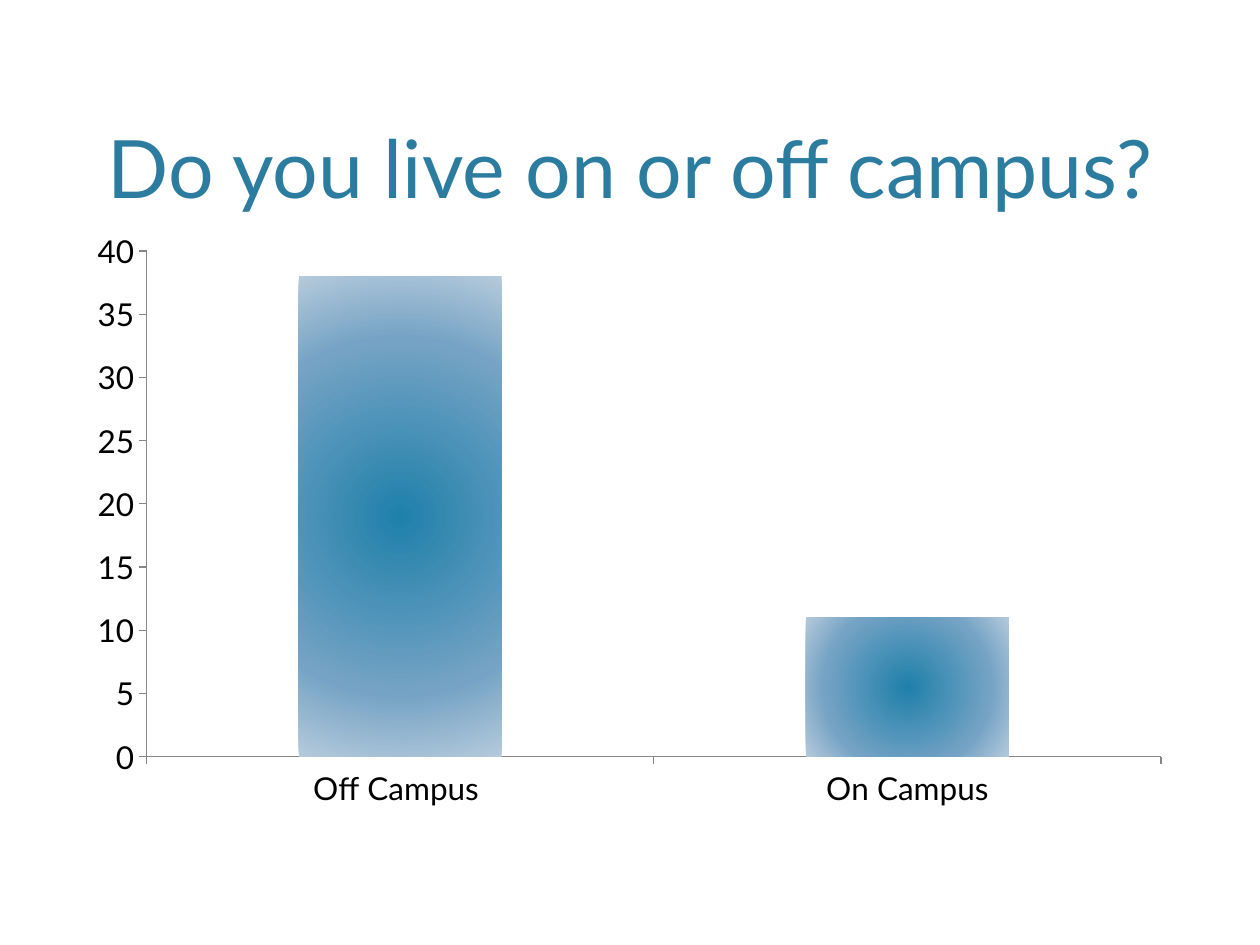
from dataclasses import dataclass

from lxml import etree
from pptx import Presentation
from pptx import util as u
from pptx.chart.data import CategoryChartData
from pptx.dml.color import RGBColor
from pptx.enum import chart as charts, text
from pptx.oxml import parse_xml
from pptx.oxml.ns import nsdecls, qn

WIDTH, HEIGHT = u.Inches(10), u.Inches(7.5)
FONT = "Lato"
TITLE_BLUE = RGBColor(0x2C, 0x7C, 0x9F)
BLACK = RGBColor(0, 0, 0)
AXIS_GRAY = RGBColor(0x86, 0x86, 0x86)
# Bar gradient from centre to corner: position in percent, colour
BAR_STOPS = (
    (0, RGBColor(0x1F, 0x80, 0xAA)),
    (68, RGBColor(0x75, 0xA3, 0xC5)),
    (100, RGBColor(0xB5, 0xCA, 0xDB)),
)


@dataclass(frozen=True)
class Area:
    """A rectangle in shares of its container."""
    left: float
    top: float
    width: float
    height: float

    def on_slide(self) -> tuple[int, int, int, int]:
        return (int(self.left * WIDTH), int(self.top * HEIGHT),
                int(self.width * WIDTH), int(self.height * HEIGHT))


TITLE_AREA = Area(0.06, 0.29 / 7.5, 0.88, 1.46 / 7.5)
CHART_AREA = Area(0.06, 1.75 / 7.5, 0.88, 4.75 / 7.5)
PLOT_AREA = Area(0.064, 0.051, 0.915, 0.845)


def style_font(font, *, size: float, color: RGBColor) -> None:
    font.name = FONT
    font.size = u.Pt(size)
    font.bold = False
    font.color.rgb = color


def write_title(box, wording: str, *, size: float, color: RGBColor) -> None:
    box.left, box.top, box.width, box.height = TITLE_AREA.on_slide()
    frame = box.text_frame
    frame.text = wording
    frame.word_wrap = True
    frame.auto_size = text.MSO_AUTO_SIZE.NONE
    frame.vertical_anchor = text.MSO_ANCHOR.BOTTOM
    para = frame.paragraphs[0]
    para.alignment = text.PP_ALIGN.CENTER
    style_font(para.runs[0].font, size=size, color=color)


def style_axis(axis) -> None:
    axis.has_major_gridlines = False
    axis.major_tick_mark = charts.XL_TICK_MARK.OUTSIDE
    axis.minor_tick_mark = charts.XL_TICK_MARK.NONE
    axis.format.line.color.rgb = AXIS_GRAY
    axis.format.line.width = u.Pt(0.75)
    style_font(axis.tick_labels.font, size=18, color=BLACK)


def fill_radially(series) -> None:
    """Fill the bars with a circular gradient, which needs XML."""
    series.format.fill.solid()
    properties = series.format.fill._xPr
    stops = "".join(
        f'<a:gs pos="{position * 1000}"><a:srgbClr val="{color}"/></a:gs>'
        for position, color in BAR_STOPS)
    gradient = parse_xml(
        f'<a:gradFill {nsdecls("a")} rotWithShape="1"><a:gsLst>{stops}</a:gsLst>'
        '<a:path path="circle">'
        '<a:fillToRect l="50000" t="50000" r="50000" b="50000"/>'
        '</a:path></a:gradFill>')
    properties.replace(properties.find(qn("a:solidFill")), gradient)


def place_plot(chart, area: Area) -> None:
    """Fix the inner plot area, which needs XML."""
    plot_area = chart._chartSpace.chart.plotArea
    for old in plot_area.findall(qn("c:layout")):
        plot_area.remove(old)
    layout = etree.Element(qn("c:layout"))
    manual = etree.SubElement(layout, qn("c:manualLayout"))
    for tag, value in (("layoutTarget", "inner"), ("xMode", "edge"),
                       ("yMode", "edge"), ("x", area.left), ("y", area.top),
                       ("w", area.width), ("h", area.height)):
        etree.SubElement(manual, qn(f"c:{tag}")).set("val", str(value))
    plot_area.insert(0, layout)


def add_campus_chart(page) -> None:
    data = CategoryChartData()
    data.categories = ["Off Campus ", "On Campus"]
    data.add_series("Series 1", (38, 11))
    chart = page.shapes.add_chart(
        charts.XL_CHART_TYPE.COLUMN_CLUSTERED, *CHART_AREA.on_slide(), data).chart
    chart.has_title = False
    chart.has_legend = False
    style_font(chart.font, size=18, color=BLACK)
    for axis in (chart.category_axis, chart.value_axis):
        style_axis(axis)
    chart.value_axis.minimum_scale = 0
    chart.value_axis.maximum_scale = 40
    chart.value_axis.major_unit = 5
    plot = chart.plots[0]
    plot.vary_by_categories = False
    plot.gap_width = 150
    fill_radially(plot.series[0])
    place_plot(chart, PLOT_AREA)


def main() -> None:
    deck = Presentation()
    deck.slide_width, deck.slide_height = WIDTH, HEIGHT
    page = deck.slides.add_slide(deck.slide_layouts.get_by_name("Title Only"))
    write_title(page.shapes.title, "Do you live on or off campus?",
                size=46, color=TITLE_BLUE)
    add_campus_chart(page)
    deck.save("out.pptx")


if __name__ == "__main__":
    main()
